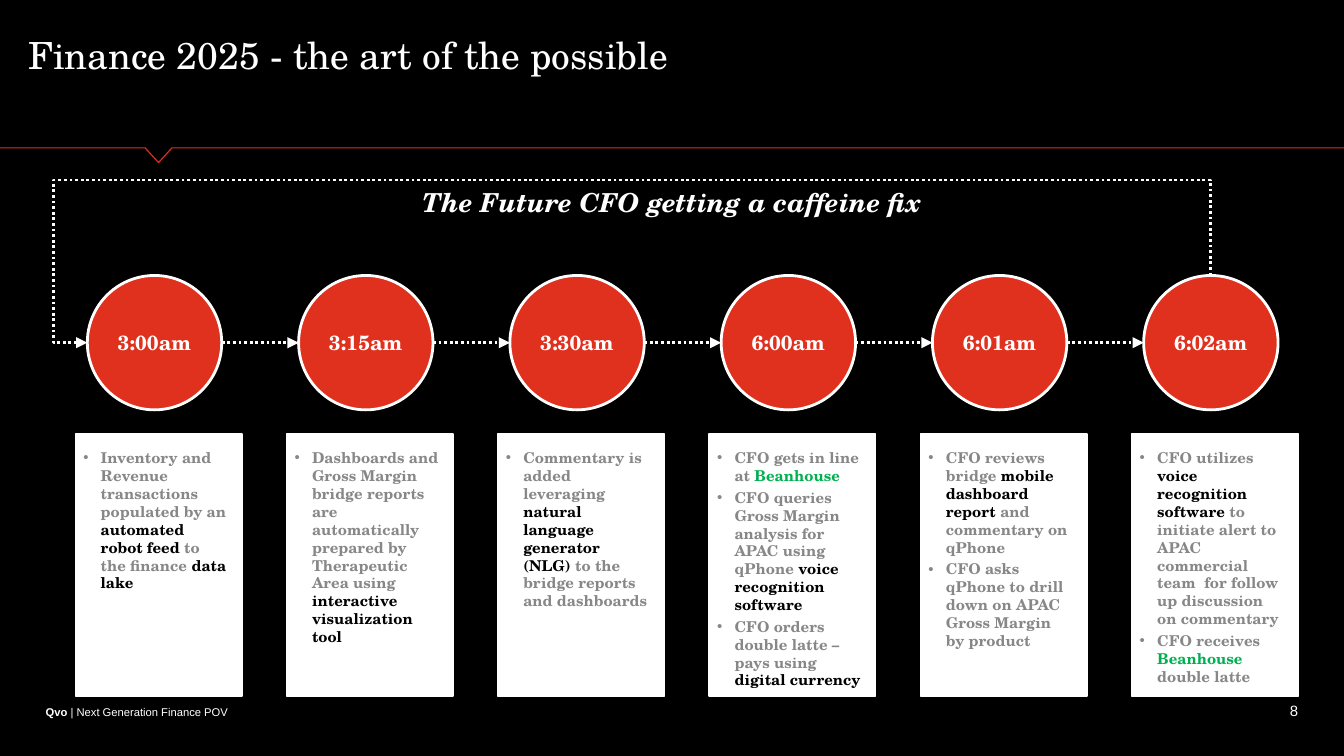
from lxml.etree import SubElement
from pptx import Presentation
from pptx.dml.color import RGBColor
from pptx.enum.dml import MSO_LINE
from pptx.enum.shapes import MSO_CONNECTOR, MSO_SHAPE
from pptx.enum.text import MSO_ANCHOR, MSO_AUTO_SIZE, PP_ALIGN
from pptx.oxml.ns import qn
from pptx.util import Inches, Pt

BLACK = RGBColor(0x00, 0x00, 0x00)
WHITE = RGBColor(0xFF, 0xFF, 0xFF)
RED = RGBColor(0xE0, 0x30, 0x1E)
GREY = RGBColor(0x87, 0x87, 0x87)
GREEN = RGBColor(0x00, 0xB0, 0x50)
SERIF = "TeX Gyre Schola"
SANS = "Arial"

# Grid, in inches: one column per time of day
SLIDE_W = 10
SLIDE_H = SLIDE_W * 9 / 16
FIRST_LEFT, LAST_LEFT = 0.65, 8.51
CIRCLE, CIRCLE_TOP = 1, 2.05
CARD_W, CARD_H, CARD_TOP = 1.24, 1.95, 3.23
CARD_OFFSET = -0.09
MID_Y = CIRCLE_TOP + CIRCLE / 2
LOOP_TOP, LOOP_LEFT = 1.34, 0.4

# Each step: time, then bullets made of (text, colour) runs
STEPS = [
    ("3:00am", [[("Inventory and Revenue transactions populated by an ", GREY),
                 ("automated robot feed ", BLACK), ("to the finance ", GREY),
                 ("data lake", BLACK)]]),
    ("3:15am", [[("Dashboards and Gross Margin bridge reports are automatically "
                  "prepared by Therapeutic Area using ", GREY),
                 ("interactive visualization tool", BLACK)]]),
    ("3:30am", [[("Commentary is added leveraging ", GREY),
                 ("natural language generator (NLG) ", BLACK),
                 ("to the bridge reports and dashboards", GREY)]]),
    ("6:00am", [[("CFO gets in line at ", GREY), ("Beanhouse", GREEN)],
                [("CFO queries Gross Margin analysis for APAC using qPhone ", GREY),
                 ("voice recognition software", BLACK)],
                [("CFO orders double latte – pays using ", GREY),
                 ("digital currency", BLACK)]]),
    ("6:01am", [[("CFO reviews bridge ", GREY), ("mobile dashboard report ", BLACK),
                 ("and commentary on qPhone", GREY)],
                [("CFO asks qPhone to drill down on APAC Gross Margin by product", GREY)]]),
    ("6:02am", [[("CFO utilizes ", GREY), ("voice recognition software ", BLACK),
                 ("to initiate alert to APAC commercial team  for follow up "
                  "discussion on commentary", GREY)],
                [("CFO receives ", GREY), ("Beanhouse ", GREEN), ("double latte", GREY)]]),
]
PITCH = (LAST_LEFT - FIRST_LEFT) / (len(STEPS) - 1)


def add_run(paragraph, text, size, color=WHITE, font=SERIF, bold=False, italic=False):
    run = paragraph.add_run()
    run.text = text
    run.font.name, run.font.size = font, Pt(size)
    run.font.bold, run.font.italic = bold, italic
    run.font.color.rgb = color


def set_frame(frame, anchor=MSO_ANCHOR.TOP, wrap=True, top=0, right=0):
    frame.word_wrap = wrap
    frame.auto_size = MSO_AUTO_SIZE.NONE
    frame.vertical_anchor = anchor
    frame.margin_left = frame.margin_bottom = 0
    frame.margin_top, frame.margin_right = Inches(top), Inches(right)


def add_label(slide, box, runs, align=PP_ALIGN.LEFT, anchor=MSO_ANCHOR.TOP):
    label = slide.shapes.add_textbox(*map(Inches, box))
    set_frame(label.text_frame, anchor)
    paragraph = label.text_frame.paragraphs[0]
    paragraph.alignment = align
    for text, style in runs:
        add_run(paragraph, text, **style)


def add_panel(slide, preset, box, fill, line_width):
    panel = slide.shapes.add_shape(preset, *map(Inches, box))
    panel.shadow.inherit = False
    panel.fill.solid()
    panel.fill.fore_color.rgb = fill
    panel.line.color.rgb = WHITE
    panel.line.width = Pt(line_width)
    return panel


def add_title(slide, text):
    title = slide.shapes.title
    title.left, title.top = Inches(0.21), Inches(0.24)
    title.width, title.height = Inches(9.18), Inches(0.34)
    set_frame(title.text_frame)
    paragraph = title.text_frame.paragraphs[0]
    paragraph.alignment = PP_ALIGN.LEFT
    add_run(paragraph, text, 20)


def add_divider(slide):
    y, notch_x, half, depth = 1.1, 1.18, 0.1, 0.11
    points = [(notch_x + half, y), (notch_x, y + depth), (notch_x - half, y), (0, y)]
    builder = slide.shapes.build_freeform(Inches(SLIDE_W), Inches(y))
    builder.add_line_segments([(Inches(px), Inches(py)) for px, py in points], close=False)
    divider = builder.convert_to_shape()
    divider.shadow.inherit = False
    divider.fill.background()
    divider.line.color.rgb = RED
    divider.line.width = Pt(0.63)


def add_arrow(slide, kind, start, end):
    arrow = slide.shapes.add_connector(kind, *map(Inches, start + end))
    arrow.line.color.rgb = WHITE
    arrow.line.width = Pt(1.5)
    arrow.line.dash_style = MSO_LINE.ROUND_DOT
    SubElement(arrow.line._get_or_add_ln(), qn("a:tailEnd"), type="triangle")
    SubElement(arrow._element.spPr, qn("a:effectLst"))
    return arrow


def add_loop(slide):
    """Arrow from the top of the last circle back to the left of the first."""
    start_x = LAST_LEFT + CIRCLE / 2
    run, drop = start_x - FIRST_LEFT, MID_Y - CIRCLE_TOP
    # The bent preset lies on its side: its width is the drop, its height the run
    left = (start_x + FIRST_LEFT - drop) / 2
    top = (CIRCLE_TOP + MID_Y - run) / 2
    loop = add_arrow(slide, MSO_CONNECTOR.ELBOW, (left, top), (left + drop, top + run))
    properties = loop._element.spPr
    transform = properties.find(qn("a:xfrm"))
    for key, value in (("rot", "16200000"), ("flipH", "1"), ("flipV", "1")):
        transform.set(key, value)
    geometry = properties.find(qn("a:prstGeom"))
    geometry.set("prst", "bentConnector4")
    guides = geometry.find(qn("a:avLst"))
    shares = ((LOOP_TOP - CIRCLE_TOP) / drop, (start_x - LOOP_LEFT) / run)
    for number, share in enumerate(shares, 1):
        SubElement(guides, qn("a:gd"), name=f"adj{number}",
                   fmla=f"val {round(share * 100000)}")


def add_circle(slide, left, time):
    circle = add_panel(slide, MSO_SHAPE.OVAL, (left, CIRCLE_TOP, CIRCLE, CIRCLE), RED, 1.5)
    set_frame(circle.text_frame, MSO_ANCHOR.MIDDLE, wrap=False)
    paragraph = circle.text_frame.paragraphs[0]
    paragraph.alignment = PP_ALIGN.CENTER
    paragraph.space_after = Pt(2)
    add_run(paragraph, time, 11, bold=True)


def add_card(slide, left, bullets):
    card = add_panel(slide, MSO_SHAPE.RECTANGLE, (left, CARD_TOP, CARD_W, CARD_H), WHITE, 0.75)
    frame = card.text_frame
    set_frame(frame, top=0.11, right=0.1)
    for index, runs in enumerate(bullets):
        paragraph = frame.add_paragraph() if index else frame.paragraphs[0]
        paragraph.alignment = PP_ALIGN.LEFT
        paragraph.space_after = Pt(2)
        properties = paragraph._p.get_or_add_pPr()
        properties.set("marL", str(Inches(0.19)))
        properties.set("indent", str(Inches(-0.13)))
        SubElement(properties, qn("a:buFont"), typeface=SANS)
        SubElement(properties, qn("a:buChar"), char="•")
        for text, color in runs:
            add_run(paragraph, text, 8, color, bold=True)


def main():
    prs = Presentation()
    prs.slide_width, prs.slide_height = Inches(SLIDE_W), Inches(SLIDE_H)
    slide = prs.slides.add_slide(prs.slide_layouts[5])
    slide.background.fill.solid()
    slide.background.fill.fore_color.rgb = BLACK

    # Heading
    add_title(slide, "Finance 2025 - the art of the possible")
    add_divider(slide)
    add_label(slide, (3, 1.39, 4, 0.24),
              [("The Future CFO getting a caffeine fix", dict(size=14, bold=True, italic=True))],
              PP_ALIGN.CENTER)

    # Timeline
    add_loop(slide)
    for column, (time, bullets) in enumerate(STEPS):
        left = FIRST_LEFT + column * PITCH
        if column:
            add_arrow(slide, MSO_CONNECTOR.STRAIGHT,
                      (left - PITCH + CIRCLE, MID_Y), (left, MID_Y))
        add_circle(slide, left, time)
        add_card(slide, left + CARD_OFFSET, bullets)

    # Footer
    add_label(slide, (0.34, 5.25, 2.8, 0.1),
              [("Qvo", dict(size=6, font=SANS, bold=True)),
               (" | Next Generation Finance POV", dict(size=6, font=SANS))])
    add_label(slide, (7.33, 5.22, 2.33, 0.13), [("8", dict(size=8, font=SANS))],
              PP_ALIGN.RIGHT, MSO_ANCHOR.MIDDLE)
    prs.save("out.pptx")


if __name__ == "__main__":
    main()
